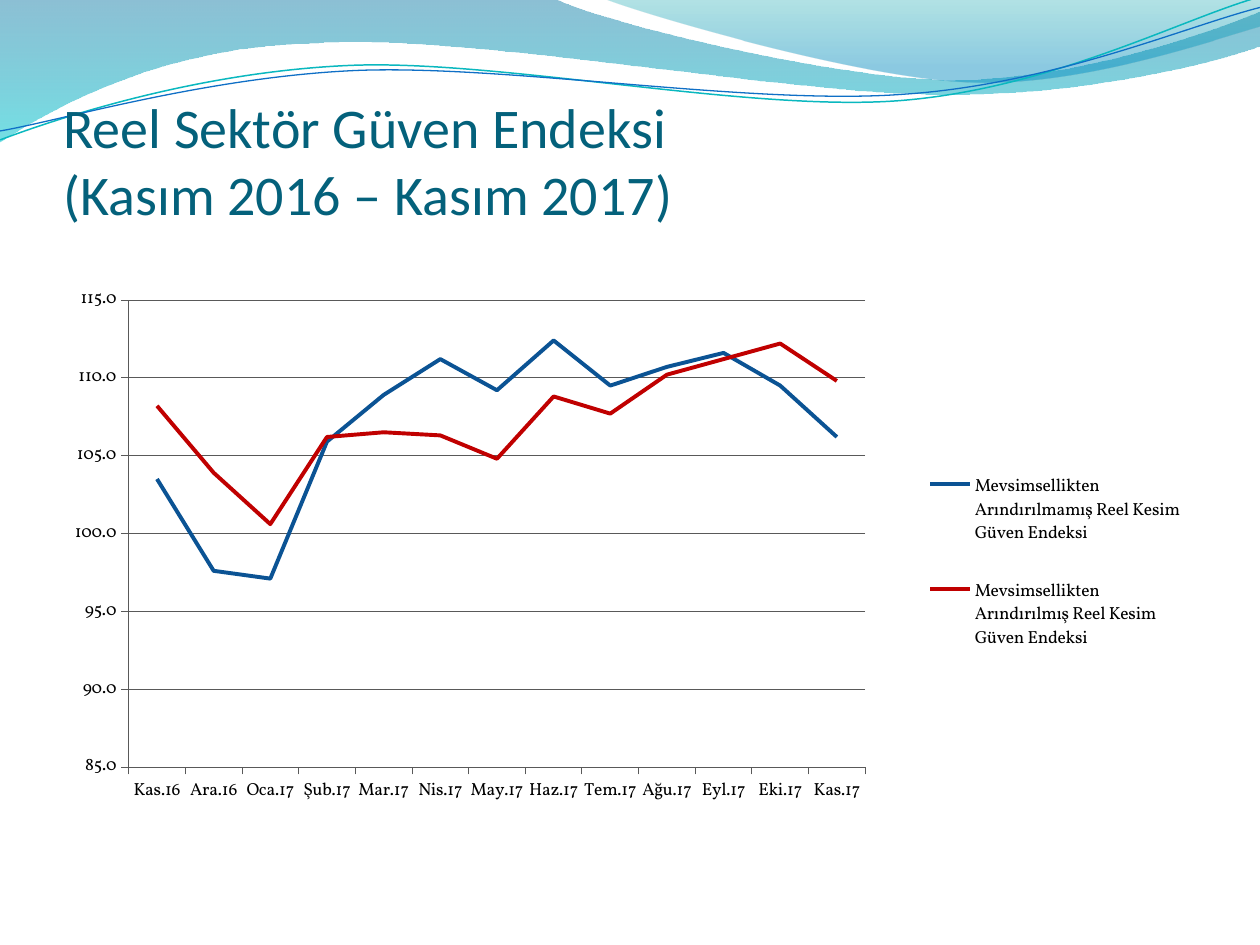
from math import cos, radians, sin

from lxml import etree
from pptx import Presentation
from pptx.chart.data import CategoryChartData
from pptx.dml.color import RGBColor
from pptx.enum.chart import XL_CHART_TYPE, XL_LEGEND_POSITION, XL_MARKER_STYLE, XL_TICK_MARK
from pptx.enum.text import MSO_ANCHOR, PP_ALIGN
from pptx.oxml.ns import qn
from pptx.util import Cm, Pt

LINE_CHART = XL_CHART_TYPE.LINE
LEGEND_RIGHT = XL_LEGEND_POSITION.RIGHT
NO_MARKER = XL_MARKER_STYLE.NONE
TICK_OUTSIDE = XL_TICK_MARK.OUTSIDE
ANCHOR_BOTTOM = MSO_ANCHOR.BOTTOM
ALIGN_LEFT = PP_ALIGN.LEFT

COLORS = {
    "title": "04617B",
    "text": "000000",
    "axis": "595959",
    "unadjusted": "0B5394",
    "adjusted": "C00000",
    "teal_line": "0AB8BF",
    "blue_line": "0F6FC6",
    "band_top": "0074A1",
    "band_bottom": "00C6CF",
    "crest_top": "00A1A9",
    "crest_bottom": "008BBF",
}
WAVE_TILT = -2.7
WAVE_CENTER = (12.68, 1.48)

BAND = [
    (0, 0), (11.18, -0.03),
    (12.09, 0.43, 16.87, 1.6, 19.25, 1.6),
    (21.67, 1.6, 24.33, 0.66, 25.4, 0.23),
    (25.43, 0.91),
    (24.97, 1.12, 22.1, 1.93, 18.95, 1.9),
    (15.8, 1.9, 9.7, 0.71, 6.53, 0.86),
    (3.28, 0.91, 1.17, 2.11, -0.03, 2.87),
    (0, 0),
]
CREST = [
    (12.17, -0.03),
    (12.93, 0.28, 17.32, 1.57, 19.53, 1.65),
    (21.74, 1.75, 24.41, 0.81, 25.4, 0.53),
    (25.4, 0), (12.17, -0.03),
]
TEAL_WAVE = [
    (0, 2.82),
    (1.22, 2.36, 4.01, 1.45, 7.04, 1.32),
    (10.03, 1.19, 15.06, 2.26, 18.11, 2.03),
    (21.16, 1.8, 23.83, 0.38, 25.35, -0.05),
]
BLUE_WAVE = [
    (0, 2.64),
    (1.19, 2.44, 4.17, 1.55, 7.19, 1.42),
    (10.24, 1.3, 15.16, 2.13, 18.21, 1.9),
    (21.23, 1.7, 23.9, 0.53, 25.4, 0.15),
]

MONTHS = ["Kas.16", "Ara.16", "Oca.17", "Şub.17", "Mar.17", "Nis.17", "May.17",
          "Haz.17", "Tem.17", "Ağu.17", "Eyl.17", "Eki.17", "Kas.17"]
SERIES = [
    ("Mevsimsellikten Arındırılmamış Reel Kesim Güven Endeksi", "unadjusted",
     [103.5, 97.6, 97.1, 105.9, 108.9, 111.2, 109.2, 112.4, 109.5, 110.7, 111.6, 109.5, 106.2]),
    ("Mevsimsellikten Arındırılmış Reel Kesim Güven Endeksi", "adjusted",
     [108.2, 103.9, 100.6, 106.2, 106.5, 106.3, 104.8, 108.8, 107.7, 110.2, 111.2, 112.2, 109.8]),
]
EDGES = {"xMode": "edge", "yMode": "edge"}
PLOT_LAYOUT = {"layoutTarget": "inner", **EDGES, "x": 0.062, "y": 0.034, "w": 0.651, "h": 0.826}
LEGEND_LAYOUT = {**EDGES, "x": 0.77, "y": 0.285, "w": 0.225, "h": 0.43}


def color(name):
    return RGBColor.from_string(COLORS[name])


def turn(segment, degrees):
    angle = radians(degrees)
    center_x, center_y = WAVE_CENTER
    turned = []
    for x, y in zip(segment[::2], segment[1::2]):
        x, y = x - center_x, y - center_y
        turned += [center_x + x * cos(angle) - y * sin(angle),
                   center_y + x * sin(angle) + y * cos(angle)]
    return turned


def manual_layout(parent, index, settings):
    for layout in parent.findall(qn("c:layout")):
        parent.remove(layout)
    layout = etree.Element(qn("c:layout"))
    parent.insert(index, layout)
    manual = etree.SubElement(layout, qn("c:manualLayout"))
    for tag, value in settings.items():
        etree.SubElement(manual, qn(f"c:{tag}")).set("val", str(value))


class SlideBuilder:
    def __init__(self, slide):
        self.slide = slide
        self.title_font = "Calibri"
        self.chart_font = "Vollkorn"

    def outline(self, segments, close):
        segments = [[Cm(value) for value in segment] for segment in segments]
        builder = self.slide.shapes.build_freeform(*segments[0])
        builder.add_line_segments([segment[-2:] for segment in segments[1:]], close=close)
        shape = builder.convert_to_shape()
        shape.shadow.inherit = False
        lines = list(shape.element.spPr.iter(qn("a:lnTo")))
        for line, segment in zip(lines, segments[1:]):
            if len(segment) == 2:
                continue
            curve = etree.Element(qn("a:cubicBezTo"))
            for x, y in zip(segment[::2], segment[1::2]):
                point = etree.SubElement(curve, qn("a:pt"))
                point.set("x", str(x - shape.left))
                point.set("y", str(y - shape.top))
            line.getparent().replace(line, curve)
        return shape

    def gradient_area(self, segments, stops):
        shape = self.outline(segments, True)
        shape.line.fill.background()
        shape.fill.gradient()
        shape.fill.gradient_angle = 270
        for stop, (position, name, opacity) in zip(shape.fill.gradient_stops, stops):
            stop.position = position
            stop.color.rgb = color(name)
        fills = shape.element.spPr.iter(qn("a:srgbClr"))
        for fill, (position, name, opacity) in zip(fills, stops):
            etree.SubElement(fill, qn("a:alpha")).set("val", str(opacity * 1000))

    def wave(self, segments, name, width):
        shape = self.outline([turn(segment, -WAVE_TILT) for segment in segments], False)
        shape.rotation = WAVE_TILT
        shape.fill.background()
        shape.line.color.rgb = color(name)
        shape.line.width = Pt(width)

    def title(self, lines, left, top, width, height):
        box = self.slide.shapes.add_textbox(Cm(left), Cm(top), Cm(width), Cm(height))
        frame = box.text_frame
        frame.word_wrap = True
        frame.vertical_anchor = ANCHOR_BOTTOM
        frame.margin_left = frame.margin_right = frame.margin_bottom = 0
        paragraph = frame.paragraphs[0]
        paragraph.alignment = ALIGN_LEFT
        for index, line in enumerate(lines):
            if index:
                paragraph.add_line_break()
            run = paragraph.add_run()
            run.text = line
            run.font.name = self.title_font
            run.font.size = Pt(32)
            run.font.color.rgb = color("title")

    def line_chart(self, left, top, width, height):
        data = CategoryChartData(number_format="0.0")
        data.categories = MONTHS
        for label, name, values in SERIES:
            data.add_series(label, values)
        chart = self.slide.shapes.add_chart(
            LINE_CHART, Cm(left), Cm(top), Cm(width), Cm(height), data).chart
        chart.has_title = False
        chart.font.name = self.chart_font
        chart.font.size = Pt(10)
        chart.font.color.rgb = color("text")
        chart.has_legend = True
        chart.legend.position = LEGEND_RIGHT
        chart.legend.include_in_layout = False
        chart.plots[0].vary_by_categories = False
        for series, (label, name, values) in zip(chart.plots[0].series, SERIES):
            series.smooth = False
            series.marker.style = NO_MARKER
            series.format.line.color.rgb = color(name)
            series.format.line.width = Pt(2.25)
        value_axis = chart.value_axis
        value_axis.minimum_scale = 85
        value_axis.maximum_scale = 115
        value_axis.major_unit = 5
        value_axis.has_major_gridlines = True
        value_axis.tick_labels.number_format = "0.0"
        value_axis.tick_labels.number_format_is_linked = False
        for axis in (value_axis, chart.category_axis):
            axis.major_tick_mark = TICK_OUTSIDE
        for part in (value_axis, chart.category_axis, value_axis.major_gridlines):
            part.format.line.color.rgb = color("axis")
            part.format.line.width = Pt(0.5)
        manual_layout(chart.plots[0]._element.getparent(), 0, PLOT_LAYOUT)
        manual_layout(chart.legend._element, 1, LEGEND_LAYOUT)


def main():
    presentation = Presentation()
    presentation.slide_width = Cm(25.4)
    presentation.slide_height = Cm(19.05)
    builder = SlideBuilder(presentation.slides.add_slide(presentation.slide_layouts[6]))
    builder.gradient_area(BAND, [(0, "band_top", 45), (1, "band_bottom", 55)])
    builder.gradient_area(CREST, [(0, "crest_top", 30), (0.8, "crest_bottom", 45)])
    builder.wave(TEAL_WAVE, "teal_line", 0.85)
    builder.wave(BLUE_WAVE, "blue_line", 0.75)
    builder.title(["Reel Sektör Güven Endeksi", "(Kasım 2016 – Kasım 2017)"], 1.28, 1.95, 23.06, 2.62)
    builder.line_chart(1.18, 5.66, 22.81, 11.4)
    presentation.save("out.pptx")


if __name__ == "__main__":
    main()
